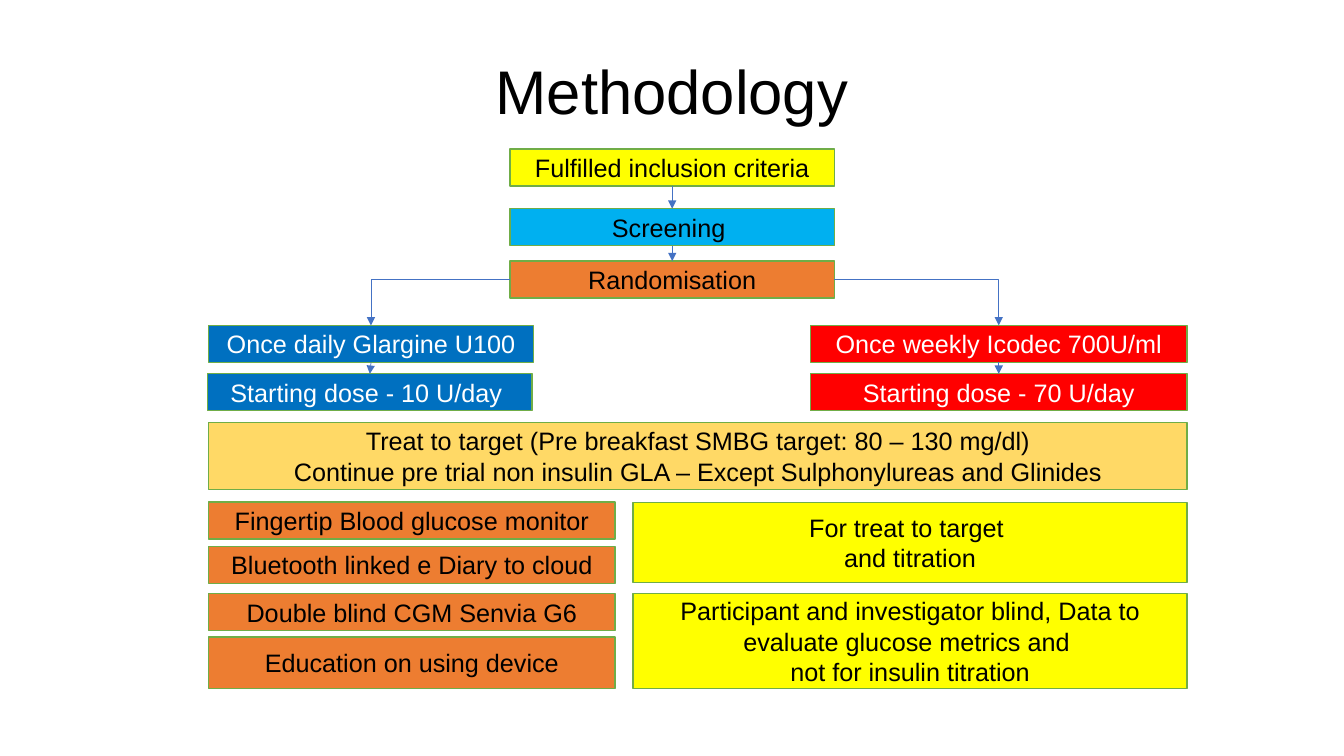
import dataclasses

import pptx
import pptx.dml.color
import pptx.enum.shapes
import pptx.enum.text
import pptx.oxml
import pptx.oxml.ns
import pptx.util

Cm = pptx.util.Cm
Pt = pptx.util.Pt
Rgb = pptx.dml.color.RGBColor.from_string
qn = pptx.oxml.ns.qn
Kind = pptx.enum.shapes.MSO_CONNECTOR
Align = pptx.enum.text.PP_ALIGN
Anchor = pptx.enum.text.MSO_ANCHOR


@dataclasses.dataclass(frozen=True)
class Theme:
    font: str = "Arial"
    head: int = 44
    body: int = 18
    dark: str = "000000"
    light: str = "FFFFFF"
    edge: str = "70AD47"
    arrow: str = "4472C4"
    yellow: str = "FFFF00"
    sky: str = "00B0F0"
    orange: str = "ED7D31"
    blue: str = "0070C0"
    red: str = "FF0000"
    gold: str = "FFD966"


THEME = Theme()
ROW = 0.93  # height of a one-line box, cm
LEFT, RIGHT = 5.26, 29.92  # edges of the chart, cm
TOP, WEST, SOUTH, EAST = range(4)  # connection sites of a rectangle


def style(frame, size, color):
    frame.word_wrap = True
    frame.vertical_anchor = Anchor.MIDDLE
    for para in frame.paragraphs:
        para.alignment = Align.CENTER
        para.font.name = THEME.font
        para.font.size = Pt(size)
        para.font.color.rgb = Rgb(color)


def title(slide, text):
    head = slide.shapes.title
    head.left, head.top = Cm(2.33), Cm(1.03)
    head.width, head.height = Cm(29.21), Cm(2.72)
    head.text_frame.text = text
    style(head.text_frame, THEME.head, THEME.dark)
    head.text_frame.paragraphs[0].line_spacing = 0.9


def box(slide, text, fill, x, y, w, h=ROW, color=THEME.dark):
    shape = slide.shapes.add_shape(
        pptx.enum.shapes.MSO_SHAPE.RECTANGLE, Cm(x), Cm(y), Cm(w), Cm(h))
    shape.shadow.inherit = False
    shape.fill.solid()
    shape.fill.fore_color.rgb = Rgb(fill)
    shape.line.color.rgb = Rgb(THEME.edge)
    shape.line.width = Pt(1)
    shape.text_frame.text = text
    style(shape.text_frame, THEME.body, color)
    return shape


def arrow(slide, start, end, site=SOUTH):
    """Join a site of start to the top of end, with one bend from a side."""
    bent = site != SOUTH
    kind = Kind.ELBOW if bent else Kind.STRAIGHT
    link = slide.shapes.add_connector(kind, 0, 0, 0, 0)
    link.begin_connect(start, site)
    link.end_connect(end, TOP)
    link.line.color.rgb = Rgb(THEME.arrow)
    link.line.width = Pt(0.5)
    props = link.element.spPr
    if bent:
        props.find(qn("a:prstGeom")).set("prst", "bentConnector2")
    tip = pptx.oxml.parse_xml(
        '<a:tailEnd xmlns:a="http://schemas.openxmlformats.org/'
        'drawingml/2006/main" type="triangle"/>')
    props.find(qn("a:ln")).append(tip)
    props.append(props.makeelement(qn("a:effectLst"), {}))


def trial(slide):
    """Draw the steps down to the two treatment arms."""
    steps = [
        ("Fulfilled inclusion criteria", THEME.yellow, 3.76),
        ("Screening ", THEME.sky, 5.26),
        ("Randomisation", THEME.orange, 6.58),
    ]
    chain = [box(slide, text, fill, 12.85, y, 8.18) for text, fill, y in steps]
    for start, end in zip(chain, chain[1:]):
        arrow(slide, start, end)

    arms = [
        ("Once daily Glargine U100", "Starting dose - 10 U/day ",
         THEME.blue, LEFT, 5.23, 8.18, WEST),
        ("Once weekly Icodec 700U/ml", "Starting dose - 70 U/day",
         THEME.red, 20.42, 20.42, 9.5, EAST),
    ]
    for drug, dose, fill, x, low, w, site in arms:
        first = box(slide, drug, fill, x, 8.2, w, color=THEME.light)
        then = box(slide, dose, fill, low, 9.42, w, color=THEME.light)
        arrow(slide, chain[-1], first, site)
        arrow(slide, first, then)


def tools(slide):
    """Draw the devices and, beside them, what they are for."""
    items = [
        ("Fingertip Blood glucose monitor", 12.65, ROW),
        ("Bluetooth linked e Diary to cloud", 13.77, ROW),
        ("Double blind CGM Senvia G6", 14.96, ROW),
        ("Education on using device", 16.05, 1.3),
    ]
    for text, y, h in items:
        box(slide, text, THEME.orange, LEFT, y, 10.24, h)

    uses = [
        ("For treat to target \nand titration", 12.67, 2.01),
        ("Participant and investigator blind, Data to evaluate glucose "
         "metrics and \nnot for insulin titration", 14.96, 2.39),
    ]
    for text, y, h in uses:
        box(slide, text, THEME.yellow, 15.95, y, RIGHT - 15.95, h)


def main():
    deck = pptx.Presentation()
    deck.slide_width, deck.slide_height = Cm(33.87), Cm(19.05)
    slide = deck.slides.add_slide(deck.slide_layouts.get_by_name("Title Only"))
    title(slide, "Methodology")
    trial(slide)
    box(slide,
        "Treat to target (Pre breakfast SMBG target: 80 – 130 mg/dl)\n"
        "Continue pre trial non insulin GLA – Except Sulphonylureas and Glinides",
        THEME.gold, LEFT, 10.64, RIGHT - LEFT, 1.7)
    tools(slide)
    deck.save("out.pptx")


if __name__ == "__main__":
    main()
